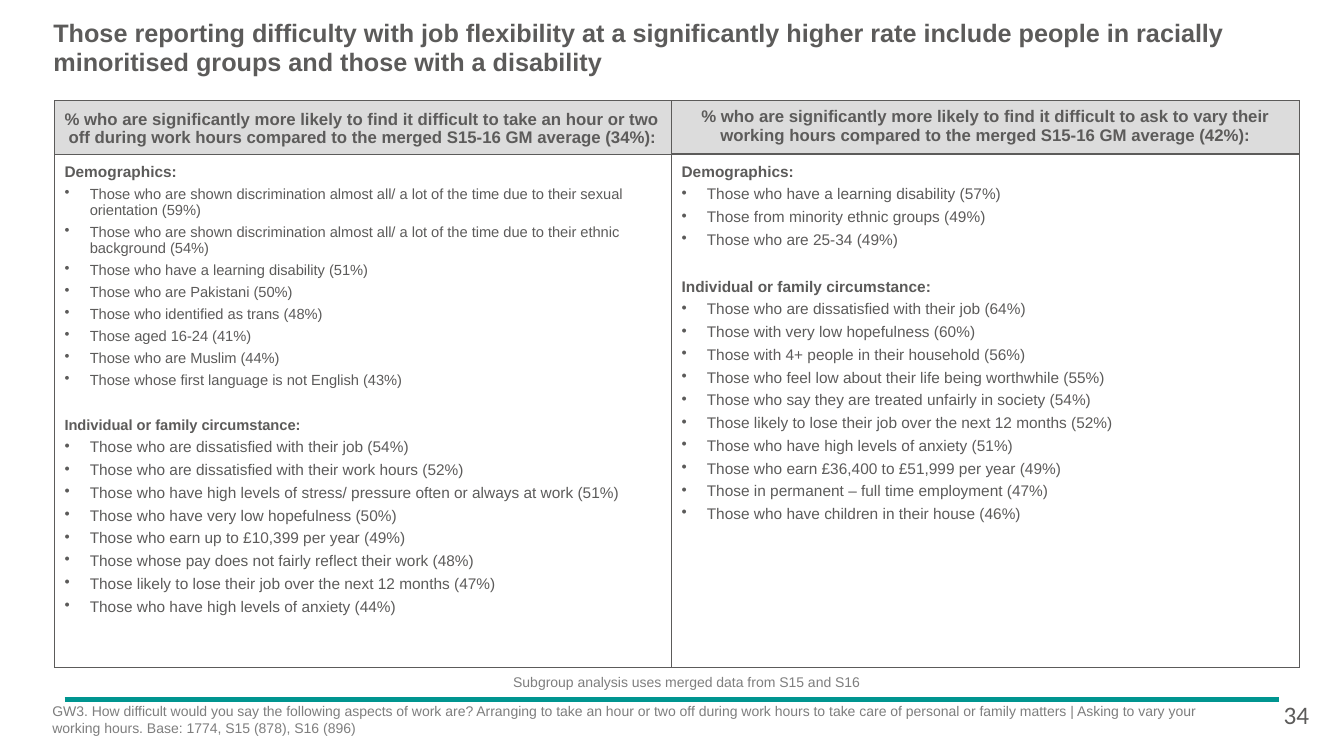
from lxml import etree
from pptx import Presentation
from pptx import util as u
from pptx.dml.color import RGBColor
from pptx.enum import shapes, text
from pptx.oxml.ns import qn

GREY, PALE_GREY, TEAL, WHITE = "5C5B5A", "7E7E7E", "009590", "FFFFFF"


def color(hex_string):
    return RGBColor.from_string(hex_string)


def style(paragraph, size, hex_string, bold=False, indent=0, first=0, font="Arial"):
    paragraph.font.name = font
    paragraph.font.size = u.Pt(size)
    paragraph.font.bold = bold
    paragraph.font.color.rgb = color(hex_string)
    properties = paragraph._p.get_or_add_pPr()
    properties.set("marL", str(u.Inches(indent)))
    properties.set("indent", str(u.Inches(first)))


presentation = Presentation()
presentation.slide_width = u.Inches(13.33)
presentation.slide_height = u.Inches(7.5)
slide = presentation.slides.add_slide(presentation.slide_layouts[6])

# Rule above the footer
rule = slide.shapes.add_connector(
    shapes.MSO_CONNECTOR.STRAIGHT,
    u.Inches(0.64), u.Inches(6.94), u.Inches(12.69), u.Inches(6.94))
rule.line.color.rgb = color(TEAL)
rule.line.width = u.Pt(3)
etree.SubElement(rule._element.spPr, qn("a:effectLst"))

# Title, note, question and page number:
# left, top, width, height, top inset, indent, size, colour, bold, font, line spacing, lines
text_boxes = [
    (0.38, 0.12, 12.3, 0.83, 0.07, 0.15, 18, GREY, True, "Arial", 20.6,
     ["Those reporting difficulty with job flexibility at a significantly higher rate "
      "include people in racially minoritised groups and those with a disability"]),
    (5.08, 6.67, 3.45, 0.19, 0.01, 0.01, 10, PALE_GREY, False, "Arial", None,
     ["Subgroup analysis uses merged data from S15 and S16"]),
    (0.51, 6.96, 11.36, 0.36, 0.01, 0.01, 10, PALE_GREY, False, "Arial", None,
     ["GW3. How difficult would you say the following aspects of work are? Arranging to take "
      "an hour or two off during work hours to take care of personal or family matters | "
      "Asking to vary your",
      "working hours. Base: 1774, S15 (878), S16 (896)"]),
    (12.72, 6.93, 0.28, 0.33, 0.01, 0.01, 18, GREY, False, "Calibri", None, ["34"]),
]
for (left, top, width, height, inset, indent, size, hex_string, bold, font,
     spacing, lines) in text_boxes:
    box = slide.shapes.add_textbox(
        u.Inches(left), u.Inches(top), u.Inches(width), u.Inches(height))
    frame = box.text_frame
    frame.word_wrap = True
    frame.margin_left = frame.margin_right = frame.margin_bottom = 0
    frame.margin_top = u.Inches(inset)
    frame.text = "\n".join(lines)
    for paragraph in frame.paragraphs:
        style(paragraph, size, hex_string, bold, indent, font=font)
        if spacing:
            paragraph.line_spacing = u.Pt(spacing)

# Table columns: header, top inset, line spacing, alignment, indent, first line, groups
# Each group: heading, heading size, space before, bullet size, bullets
columns = [
    ("% who are significantly more likely to find it difficult to take an hour or two "
     "off during work hours compared to the merged S15-16 GM average (34%):",
     0.1, 13, text.PP_ALIGN.LEFT, 0.14, -0.04,
     [("Demographics:", 11, 0, 10.5, [
         "Those who are shown discrimination almost all/ a lot of the time "
         "due to their sexual orientation (59%)",
         "Those who are shown discrimination almost all/ a lot of the time "
         "due to their ethnic background (54%)",
         "Those who have a learning disability (51%)",
         "Those who are Pakistani (50%)",
         "Those who identified as trans (48%)",
         "Those aged 16-24 (41%)",
         "Those who are Muslim (44%)",
         "Those whose first language is not English (43%)"]),
      ("Individual or family circumstance:", 10.5, 20.6, 11, [
          "Those who are dissatisfied with their job (54%)",
          "Those who are dissatisfied with their work hours (52%)",
          "Those who have high levels of stress/ pressure often or always at work (51%)",
          "Those who have very low hopefulness (50%)",
          "Those who earn up to £10,399 per year (49%)",
          "Those whose pay does not fairly reflect their work (48%)",
          "Those likely to lose their job over the next 12 months (47%)",
          "Those who have high levels of anxiety (44%)"])]),
    ("% who are significantly more likely to find it difficult to ask to vary their "
     "working hours compared to the merged S15-16 GM average (42%):",
     0.06, 13.7, text.PP_ALIGN.CENTER, 0, 0,
     [("Demographics:", 11, 0, 11, [
         "Those who have a learning disability (57%)",
         "Those from minority ethnic groups (49%)",
         "Those who are 25-34 (49%)"]),
      ("Individual or family circumstance:", 11, 21.2, 11, [
          "Those who are dissatisfied with their job (64%)",
          "Those with very low hopefulness (60%)",
          "Those with 4+ people in their household (56%)",
          "Those who feel low about their life being worthwhile (55%)",
          "Those who say they are treated unfairly in society (54%)",
          "Those likely to lose their job over the next 12 months (52%)",
          "Those who have high levels of anxiety (51%)",
          "Those who earn £36,400 to £51,999 per year (49%)",
          "Those in permanent – full time employment (47%)",
          "Those who have children in their house (46%)"])]),
]
table = slide.shapes.add_table(
    2, 2, u.Inches(0.54), u.Inches(1), u.Inches(12.35), u.Inches(5.62)).table
table.first_row = table.horz_banding = False
for column, width in zip(table.columns, (6.12, 6.23)):
    column.width = u.Inches(width)
for row, height in zip(table.rows, (0.53, 5.09)):
    row.height = u.Inches(height)

# Cell fills, insets and borders
for row in range(2):
    for column in range(2):
        cell = table.cell(row, column)
        cell.margin_left = cell.margin_right = cell.margin_bottom = 0
        cell.margin_top = u.Inches(0.09 if row else columns[column][1])
        cell.fill.solid()
        cell.fill.fore_color.rgb = color(WHITE if row else GREY)
        properties = cell._tc.get_or_add_tcPr()
        if row == 0:
            fill_color = properties.find(".//" + qn("a:srgbClr"))
            etree.SubElement(fill_color, qn("a:alpha"), val="21000")
        for position, side in enumerate("LRTB"):
            thick = column == 1 and side == "TB"[1 - row]
            border = etree.Element(qn("a:ln" + side), w=str(u.Pt(1.5 if thick else 0.75)))
            fill = etree.SubElement(border, qn("a:solidFill"))
            etree.SubElement(fill, qn("a:srgbClr"), val=GREY)
            properties.insert(position, border)

# Cell text
for index, (header, _, spacing, alignment, indent, first, groups) in enumerate(columns):
    paragraph = table.cell(0, index).text_frame.paragraphs[0]
    paragraph.text = header
    paragraph.alignment = alignment
    paragraph.line_spacing = u.Pt(spacing)
    style(paragraph, 12, GREY, True, indent, first)

    frame = table.cell(1, index).text_frame
    for number, (heading, heading_size, gap, bullet_size, bullets) in enumerate(groups):
        paragraph = frame.add_paragraph() if number else frame.paragraphs[0]
        paragraph.text = heading
        paragraph.space_before = u.Pt(gap)
        style(paragraph, heading_size, GREY, True, 0.1)
        for bullet in bullets:
            paragraph = frame.add_paragraph()
            paragraph.text = bullet
            paragraph.space_before = u.Pt(4)
            style(paragraph, bullet_size, GREY, False, 0.35, -0.25)
            mark = etree.Element(qn("a:buChar"), char="•")
            paragraph._p.pPr.find(qn("a:defRPr")).addprevious(mark)

presentation.save("out.pptx")
